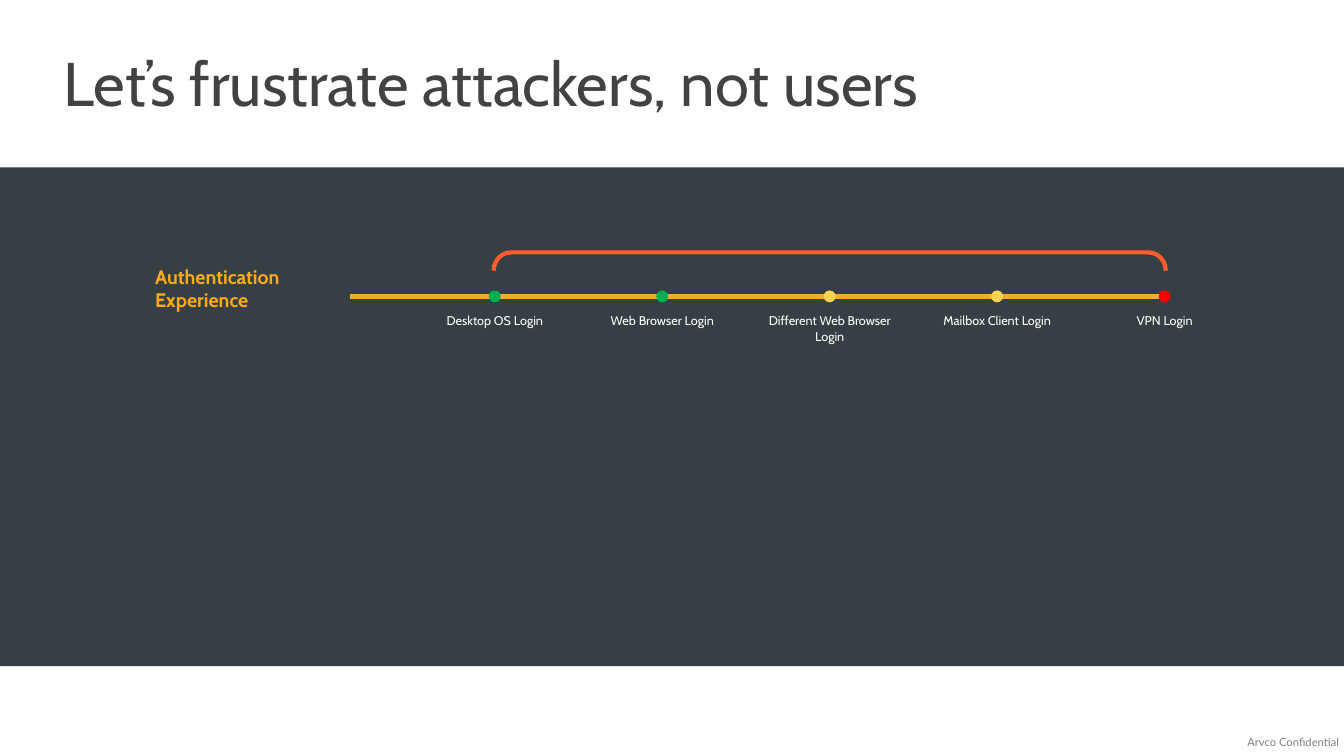
from pptx import Presentation
from pptx.dml.color import RGBColor
from pptx.enum import shapes, text
from pptx.oxml import ns
from pptx.util import Cm, Pt
from lxml import etree

# Content
TITLE = "Let’s frustrate attackers, not users"
HEADING = "Authentication Experience"
FOOTER = "Arvco Confidential"
GREEN, YELLOW, RED = "00B050", "FFD351", "FF0000"
STEPS = [
    ("Desktop OS Login", GREEN),
    ("Web Browser Login", GREEN),
    ("Different Web Browser Login", YELLOW),
    ("Mailbox Client Login", YELLOW),
    ("VPN Login", RED),
]

# Timeline geometry in cm
FIRST_X, PITCH, LINE_Y = 12.47, 4.22, 7.47
DOT, LABEL_W, LABEL_H = 0.3, 3.9, 1.04
BRACKET_W, BRACKET_H, BRACKET_Y = 0.46, 16.94, 6.59


def rgb(value):
    return RGBColor.from_string(value)


def write(sp, words, size, color, font="Cabin", bold=False,
          align=text.PP_ALIGN.LEFT, anchor=text.MSO_ANCHOR.TOP,
          spacing=None, margins=None, wrap=True):
    tf = sp.text_frame
    tf.auto_size = text.MSO_AUTO_SIZE.NONE
    tf.word_wrap = wrap
    tf.vertical_anchor = anchor
    if margins:
        tf.margin_left, tf.margin_top, tf.margin_right, tf.margin_bottom = map(Cm, margins)
    p = tf.paragraphs[0]
    p.alignment = align
    if spacing:
        p.line_spacing = spacing
    r = p.add_run()
    r.text = words
    r.font.name, r.font.size, r.font.bold = font, Pt(size), bold
    r.font.color.rgb = rgb(color)


def add_box(x, y, w, h):
    return s.shapes.add_textbox(Cm(x), Cm(y), Cm(w), Cm(h))


def add_filled(kind, x, y, w, h, color):
    sp = s.shapes.add_shape(kind, Cm(x), Cm(y), Cm(w), Cm(h))
    sp.shadow.inherit = False
    sp.fill.solid()
    sp.fill.fore_color.rgb = rgb(color)
    sp.line.fill.background()
    return sp


prs = Presentation()
prs.slide_width, prs.slide_height = Cm(33.87), Cm(19.05)
s = prs.slides.add_slide(prs.slide_layouts[5])

# Title, footer and dark band
title = s.shapes.title
title.left, title.top, title.width, title.height = Cm(1.35), Cm(1.22), Cm(30.18), Cm(3.45)
write(title, TITLE, 44, "414244", spacing=0.9)
write(add_box(31.45, 18.54, 2.3, 0.33), FOOTER, 8, "7F7F7F", font="Lato",
      align=text.PP_ALIGN.RIGHT, margins=(0, 0, 0, 0), wrap=False)
add_filled(shapes.MSO_SHAPE.RECTANGLE, 0, 4.22, 33.87, 12.57, "363F44")

# Bracket over the steps, turned to open downwards
center_x = FIRST_X + PITCH * (len(STEPS) - 1) / 2
bracket = s.shapes.add_shape(
    shapes.MSO_SHAPE.RIGHT_BRACKET, Cm(center_x - BRACKET_W / 2),
    Cm(BRACKET_Y - BRACKET_H / 2), Cm(BRACKET_W), Cm(BRACKET_H))
bracket.rotation = 270
bracket.adjustments[0] = 0.95
bracket.shadow.inherit = False
bracket.fill.background()
bracket.line.color.rgb = rgb("FF5E2C")
bracket.line.width = Pt(3)

# Timeline
line = s.shapes.add_connector(shapes.MSO_CONNECTOR.STRAIGHT,
                              Cm(8.83), Cm(LINE_Y), Cm(29.39), Cm(LINE_Y))
line.line.color.rgb = rgb("FBAB2C")
line.line.width = Pt(3)
etree.SubElement(line._element.spPr, ns.qn("a:effectLst"))

for i, (label, color) in enumerate(STEPS):
    x = FIRST_X + i * PITCH
    add_filled(shapes.MSO_SHAPE.OVAL, x - DOT / 2, LINE_Y - DOT / 2, DOT, DOT, color)
    write(add_box(x - LABEL_W / 2, LINE_Y + 0.3, LABEL_W, LABEL_H), label, 9,
          "FFFFFF", align=text.PP_ALIGN.CENTER)

# Heading beside the timeline
write(add_box(3.78, 6.86, 5.72, 0.99), HEADING, 14, "FCAA1A", bold=True,
      anchor=text.MSO_ANCHOR.BOTTOM, spacing=0.95, margins=(0.13, 0, 0, 0))

prs.save("out.pptx")
